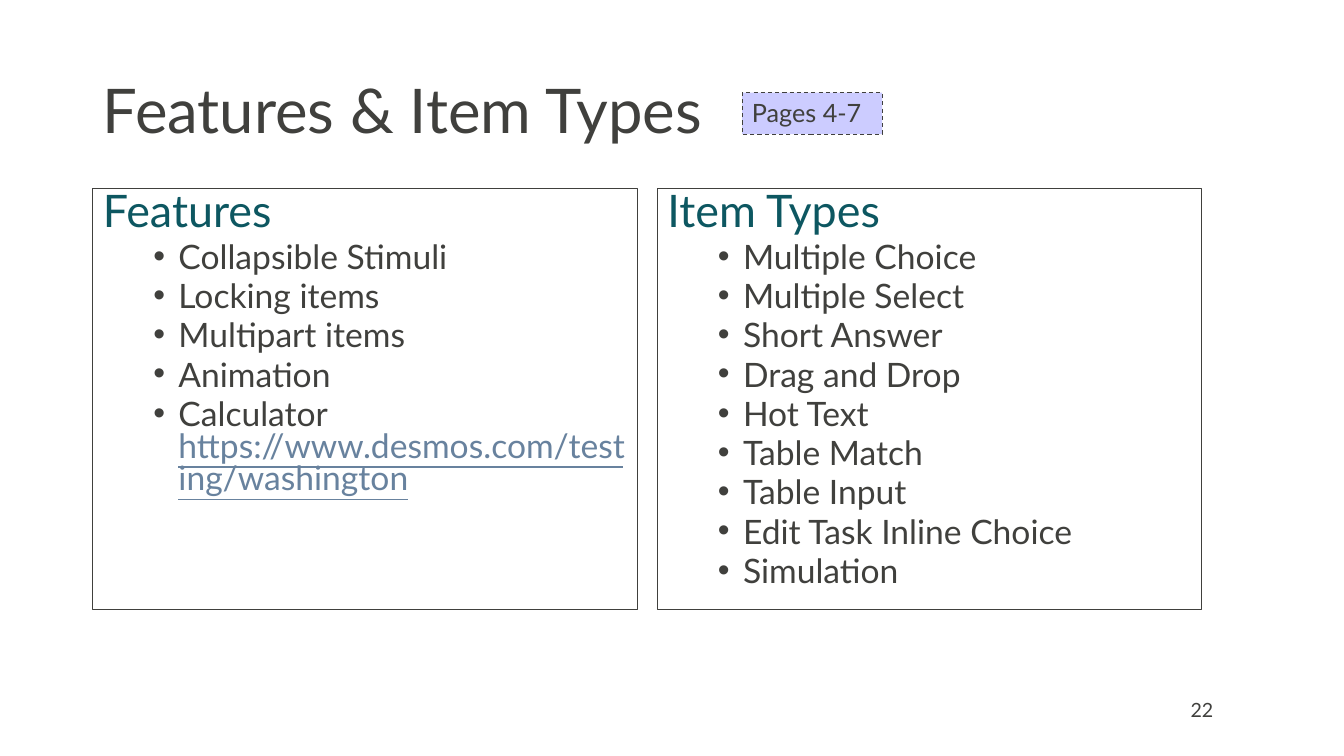
"""Build the slide that lists assessment features and item types."""
from dataclasses import dataclass

from lxml import etree
from pptx import Presentation
from pptx import util as u
from pptx.dml.color import RGBColor
from pptx.enum import dml, shapes, text
from pptx.oxml import ns

FONT = "Lato"
COLORS = {"ink": "40403D", "heading": "0D5761", "link": "68829E", "badge": "CCCCFF"}
PANEL_LEFT, PANEL_TOP = 0.92, 1.87
PANEL_WIDTH, PANEL_HEIGHT = 5.4, 4.18
PANEL_STEP = 5.6


@dataclass(frozen=True)
class Item:
    label: str
    link: str = ""


@dataclass(frozen=True)
class Panel:
    heading: str
    items: tuple[Item, ...]


PANELS = (
    Panel("Features", (
        Item("Collapsible Stimuli"),
        Item("Locking items"),
        Item("Multipart items"),
        Item("Animation"),
        Item("Calculator ", "https://www.desmos.com/testing/washington"),
    )),
    Panel("Item Types", tuple(map(Item, (
        "Multiple Choice", "Multiple Select", "Short Answer",
        "Drag and Drop", "Hot Text", "Table Match", "Table Input",
        "Edit Task Inline Choice", "Simulation",
    )))),
)


def rgb(name: str) -> RGBColor:
    return RGBColor.from_string(COLORS[name])


def place(shape, left: float, top: float, width: float, height: float) -> None:
    shape.left, shape.top = u.Inches(left), u.Inches(top)
    shape.width, shape.height = u.Inches(width), u.Inches(height)


def format_run(run, size: float, color: str) -> None:
    run.font.name = FONT
    run.font.size = u.Pt(size)
    run.font.color.rgb = rgb(color)


def outline(shape) -> None:
    shape.line.color.rgb = rgb("ink")
    shape.line.width = u.Pt(0.75)


def set_text(shape, words: str, size: float, anchor: text.MSO_ANCHOR) -> None:
    frame = shape.text_frame
    frame.text = words
    frame.word_wrap = True
    frame.vertical_anchor = anchor
    paragraph = frame.paragraphs[0]
    paragraph.alignment = text.PP_ALIGN.LEFT
    format_run(paragraph.runs[0], size, "ink")


def set_bullet(paragraph, character: str, margin: float, indent: float) -> None:
    properties = paragraph._p.get_or_add_pPr()
    properties.set("marL", str(u.Inches(margin)))
    properties.set("indent", str(u.Inches(indent)))
    if character:
        etree.SubElement(properties, ns.qn("a:buFont"), typeface="Arial")
        etree.SubElement(properties, ns.qn("a:buChar"), char=character)
    else:
        etree.SubElement(properties, ns.qn("a:buNone"))


def fill_panel(shape, panel: Panel) -> None:
    outline(shape)
    frame = shape.text_frame
    frame.auto_size = text.MSO_AUTO_SIZE.NONE
    frame.text = panel.heading
    heading = frame.paragraphs[0]
    set_bullet(heading, "", 0, 0)
    heading.space_before = u.Pt(0)
    format_run(heading.runs[0], 32, "heading")
    for item in panel.items:
        paragraph = frame.add_paragraph()
        paragraph.text = item.label
        paragraph.level = 1
        set_bullet(paragraph, "•", 0.75, -0.25)
        paragraph.space_before = u.Pt(5)
        format_run(paragraph.runs[0], 24, "ink")
        if item.link:
            link = paragraph.add_run()
            link.text = item.link
            format_run(link, 24, "link")
            link.font.underline = True
    for paragraph in frame.paragraphs:
        paragraph.line_spacing = 0.8


def add_badge(slide, words: str) -> None:
    badge = slide.shapes.add_shape(
        shapes.MSO_SHAPE.RECTANGLE,
        u.Inches(7.36), u.Inches(0.92), u.Inches(1.39), u.Inches(0.41))
    badge.shadow.inherit = False
    badge.fill.solid()
    badge.fill.fore_color.rgb = rgb("badge")
    outline(badge)
    badge.line.dash_style = dml.MSO_LINE.DASH
    set_text(badge, words, 18, text.MSO_ANCHOR.TOP)
    badge.text_frame.auto_size = text.MSO_AUTO_SIZE.SHAPE_TO_FIT_TEXT


def main() -> None:
    presentation = Presentation()
    presentation.slide_width = u.Inches(13.33)
    presentation.slide_height = u.Inches(7.5)
    slide = presentation.slides.add_slide(
        presentation.slide_layouts.get_by_name("Two Content"))

    title = slide.shapes.title
    place(title, 0.92, 0.4, 11.5, 1.45)
    set_text(title, "Features & Item Types", 44, text.MSO_ANCHOR.MIDDLE)
    title.text_frame.paragraphs[0].line_spacing = 0.9

    for index, panel in enumerate(PANELS):
        body = slide.placeholders[index + 1]
        place(body, PANEL_LEFT + index * PANEL_STEP, PANEL_TOP,
              PANEL_WIDTH, PANEL_HEIGHT)
        fill_panel(body, panel)

    add_badge(slide, "Pages 4-7")
    page_number = slide.shapes.add_textbox(
        u.Inches(11.71), u.Inches(6.84), u.Inches(0.7), u.Inches(0.4))
    set_text(page_number, "22", 14, text.MSO_ANCHOR.MIDDLE)
    presentation.save("out.pptx")


if __name__ == "__main__":
    main()
